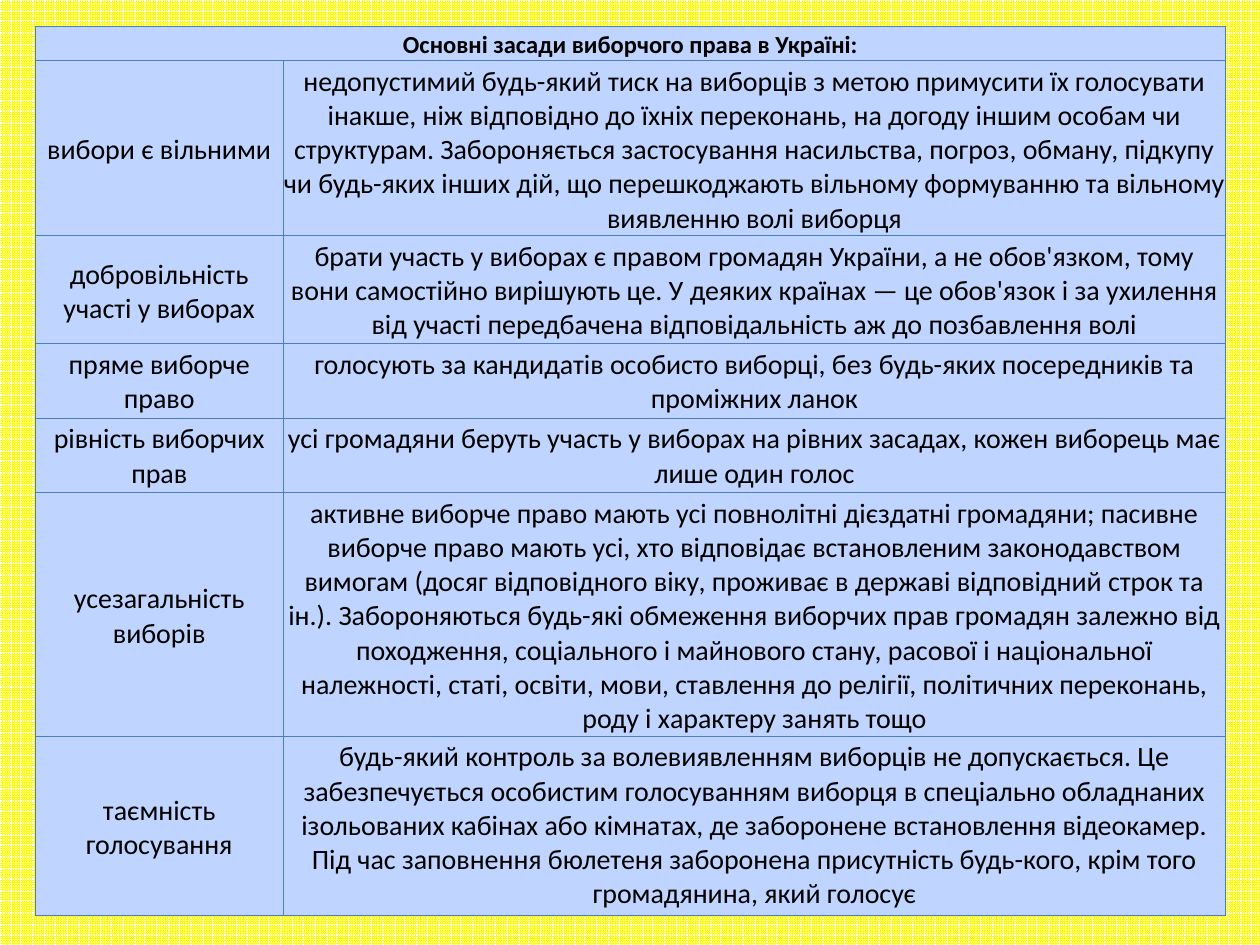
from dataclasses import dataclass

from lxml import etree
from pptx import Presentation
from pptx import util as u
from pptx.dml.color import RGBColor
from pptx.enum import dml, text
from pptx.oxml.ns import qn

COLORS = {
    "grid": "FFFF00",
    "paper": "FFFFFF",
    "cell": "BFD5FF",
    "border": "4B7EBC",
    "text": "000000",
}
FONT = "Calibri"
TITLE = "Основні засади виборчого права в Україні:"
TITLE_HEIGHT = 0.69
COLUMN_WIDTHS = (5.0, 19.0)
TABLE_HEIGHT = 17.75


@dataclass
class Principle:
    name: str
    meaning: str
    height: float
    name_anchor: text.MSO_ANCHOR = text.MSO_ANCHOR.MIDDLE


PRINCIPLES = [
    Principle(
        "вибори є вільними",
        "недопустимий будь-який тиск на виборців з метою примусити їх голосувати "
        "інакше, ніж відповідно до їхніх переконань, на догоду іншим особам чи "
        "структурам. Забороняється застосування насильства, погроз, обману, підкупу "
        "чи будь-яких інших дій, що перешкоджають вільному формуванню та вільному "
        "виявленню волі виборця",
        2.72,
    ),
    Principle(
        "добровільність участі у виборах",
        "брати участь у виборах є правом громадян України, а не обов'язком, тому "
        "вони самостійно вирішують це. У деяких країнах — це обов'язок і за ухилення "
        "від участі передбачена відповідальність аж до позбавлення волі",
        2.18,
    ),
    Principle(
        "пряме виборче право",
        "голосують за кандидатів особисто виборці, без будь-яких посередників та "
        "проміжних ланок",
        1.5,
        text.MSO_ANCHOR.TOP,
    ),
    Principle(
        "рівність виборчих прав",
        "усі громадяни беруть участь у виборах на рівних засадах, кожен виборець має "
        "лише один голос",
        1.5,
        text.MSO_ANCHOR.TOP,
    ),
    Principle(
        "усезагальність виборів",
        "активне виборче право мають усі повнолітні дієздатні громадяни; пасивне "
        "виборче право мають усі, хто відповідає встановленим законодавством "
        "вимогам (досяг відповідного віку, проживає в державі відповідний строк та "
        "ін.). Забороняються будь-які обмеження виборчих прав громадян залежно від "
        "походження, соціального і майнового стану, расової і національної "
        "належності, статі, освіти, мови, ставлення до релігії, політичних переконань, "
        "роду і характеру занять тощо",
        4.01,
    ),
    Principle(
        "таємність голосування",
        "будь-який контроль за волевиявленням виборців не допускається. Це "
        "забезпечується особистим голосуванням виборця в спеціально обладнаних "
        "ізольованих кабінах або кімнатах, де заборонене встановлення відеокамер. "
        "Під час заповнення бюлетеня заборонена присутність будь-кого, крім того "
        "громадянина, який голосує",
        3.61,
    ),
]


def color(name: str) -> RGBColor:
    return RGBColor.from_string(COLORS[name])


def style_cell(cell) -> None:
    """Set borders before the fill, as the schema orders them."""
    properties = cell._tc.get_or_add_tcPr()
    for side in ("lnL", "lnR", "lnT", "lnB"):
        line = etree.SubElement(properties, qn(f"a:{side}"), w=str(u.Pt(0.75)))
        fill = etree.SubElement(line, qn("a:solidFill"))
        etree.SubElement(fill, qn("a:srgbClr"), val=COLORS["border"])
    cell.fill.solid()
    cell.fill.fore_color.rgb = color("cell")
    cell.margin_left = cell.margin_right = cell.margin_bottom = 0
    cell.margin_top = u.Cm(0.08)


def write_cell(cell, words: str, size: int, bold: bool = False,
               anchor: text.MSO_ANCHOR = text.MSO_ANCHOR.TOP) -> None:
    cell.text = words
    cell.vertical_anchor = anchor
    paragraph = cell.text_frame.paragraphs[0]
    paragraph.alignment = text.PP_ALIGN.CENTER
    font = paragraph.font
    font.name, font.size, font.bold = FONT, u.Pt(size), bold
    font.color.rgb = color("text")


def paint_background(slide) -> None:
    fill = slide.background.fill
    fill.patterned()
    fill.pattern = dml.MSO_PATTERN.SMALL_GRID
    fill.fore_color.rgb = color("grid")
    fill.back_color.rgb = color("paper")


def add_principles_table(slide) -> None:
    frame = slide.shapes.add_table(
        len(PRINCIPLES) + 1, len(COLUMN_WIDTHS), u.Cm(0.71), u.Cm(0.53),
        u.Cm(sum(COLUMN_WIDTHS)), u.Cm(TABLE_HEIGHT))
    table = frame.table
    table.first_row = table.horz_banding = False
    for column, width in zip(table.columns, COLUMN_WIDTHS):
        column.width = u.Cm(width)
    heights = [TITLE_HEIGHT] + [principle.height for principle in PRINCIPLES]
    for row, height in zip(table.rows, heights):
        row.height = u.Cm(height)
        for cell in row.cells:
            style_cell(cell)
    frame.height = u.Cm(TABLE_HEIGHT)

    table.cell(0, 0).merge(table.cell(0, 1))
    write_cell(table.cell(0, 0), TITLE, 14, bold=True)
    for index, principle in enumerate(PRINCIPLES, start=1):
        write_cell(table.cell(index, 0), principle.name, 16,
                   anchor=principle.name_anchor)
        write_cell(table.cell(index, 1), principle.meaning, 16)


def main() -> None:
    presentation = Presentation()
    presentation.slide_width, presentation.slide_height = u.Cm(25.4), u.Cm(19.05)
    slide = presentation.slides.add_slide(presentation.slide_layouts[6])
    paint_background(slide)
    add_principles_table(slide)
    presentation.save("out.pptx")


if __name__ == "__main__":
    main()
